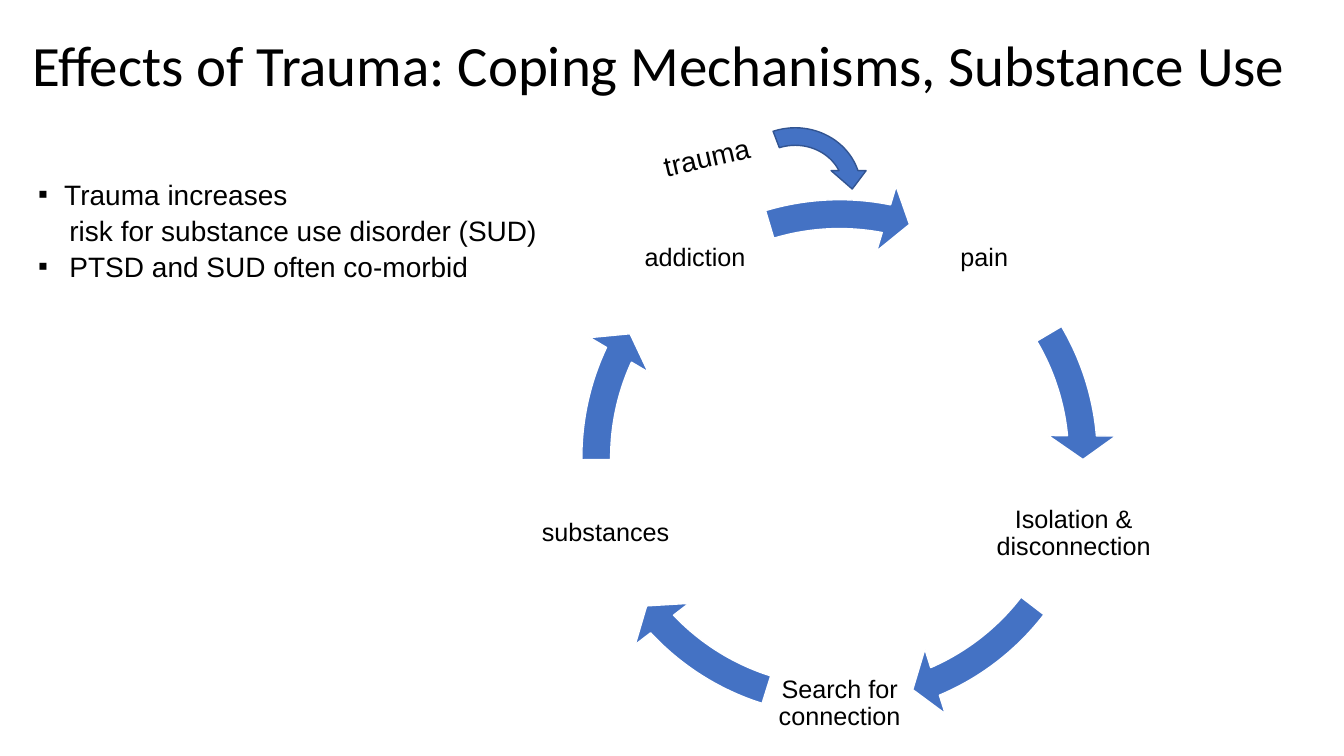
from math import cos, radians, sin

from lxml.etree import SubElement
from pptx import Presentation
from pptx.dml.color import RGBColor as Rgb
from pptx.enum.shapes import MSO_SHAPE as Kind
from pptx.enum.text import MSO_ANCHOR as Anchor, PP_ALIGN as Align
from pptx.oxml.ns import qn
from pptx.util import Cm, Pt

HUES = {"ink": "000000", "paper": "FFFFFF", "arrow": "4472C4", "edge": "325491"}

# Cycle: label, label width, start and end angle of the arrow after it
STEPS = [
    ("pain", 3.73, 329.44, 354.88),
    ("Isolation & disconnection", 6.71, 37.56, 66.91),
    ("Search for connection", 3.73, 107.5, 136.84),
    ("substances", 3.73, 179.51, 204.96),
    ("addiction", 3.73, 253.31, 281.09),
]
MID_X, MID_Y = 21.16, 11.53
REACH = 6.2
RING = 13.97
SIDE = 3.73

# Bullet lines: text, left margin, first-line indent, bullet
POINTS = [
    ("Trauma increases", 0.81, -0.66, "▪"),
    ("risk for substance use disorder (SUD)", 0.94, 0, None),
    ("PTSD and SUD often co-morbid", 0.94, -0.79, "▪"),
]


def hue(name):
    return Rgb.from_string(HUES[name])


def style(para, size, font="Arial", space=0.9):
    para.line_spacing = space
    for run in para.runs:
        run.font.size = Pt(size)
        run.font.name = font
        run.font.color.rgb = hue("ink")


def add_text(slide, box, text, size, font="Arial", space=0.9):
    shape = slide.shapes.add_textbox(*map(Cm, box))
    frame = shape.text_frame
    frame.word_wrap = True
    frame.text = text
    for para in frame.paragraphs:
        style(para, size, font, space)
    return shape


def add_label(slide, text, width, angle):
    turn = radians(angle)
    left = MID_X + REACH * cos(turn) - width / 2
    top = MID_Y + REACH * sin(turn) - SIDE / 2
    frame = add_text(slide, (left, top, width, SIDE), text, 18).text_frame
    frame.vertical_anchor = Anchor.MIDDLE
    frame.margin_left = frame.margin_right = Cm(0.08)
    frame.margin_top = frame.margin_bottom = Cm(0.08)
    frame.paragraphs[0].alignment = Align.CENTER


def add_arrow(slide, box, start, end, head, thick, wing, edge):
    shape = slide.shapes.add_shape(Kind.CIRCULAR_ARROW, *map(Cm, box))
    shape.shadow.inherit = False
    # One degree is 0.6 of an adjustment unit
    values = (thick, head * 0.6, end * 0.6, start * 0.6, wing)
    for i, value in enumerate(values):
        shape.adjustments[i] = value
    shape.fill.solid()
    shape.fill.fore_color.rgb = hue("arrow")
    shape.line.color.rgb = hue(edge)
    shape.line.width = Pt(1)


def indent(para, left, first, mark):
    props = para._p.get_or_add_pPr()
    props.set("marL", str(Cm(left)))
    props.set("indent", str(Cm(first)))
    if mark:
        SubElement(props, qn("a:buFont")).set("typeface", "Arial")
        SubElement(props, qn("a:buChar")).set("char", mark)


def main():
    deck = Presentation()
    deck.slide_width, deck.slide_height = Cm(33.87), Cm(19.05)
    slide = deck.slides.add_slide(deck.slide_layouts[6])

    # Title
    title = add_text(slide, (0.56, 0.46, 32.36, 2.51),
                     "Effects of Trauma: Coping Mechanisms, Substance Use",
                     40.7, "Calibri")
    title.text_frame.vertical_anchor = Anchor.MIDDLE
    title.fill.solid()
    title.fill.fore_color.rgb = hue("paper")

    # Cycle of five steps
    ring = (MID_X - RING / 2, MID_Y - RING / 2, RING, RING)
    for i, (text, width, start, end) in enumerate(STEPS):
        add_label(slide, text, width, -54 + 72 * i)
        add_arrow(slide, ring, start, end, 5.6, 0.052, 0.061, "paper")

    # Bullet list
    lines = "\n".join(point[0] for point in POINTS)
    body = add_text(slide, (0.56, 4.29, 16.99, 2.95), lines, 20, space=1.07)
    for para, point in zip(body.text_frame.paragraphs, POINTS):
        indent(para, *point[1:])

    # Trauma entering the cycle
    cause = add_text(slide, (16.28, 3.25, 3.76, 1.09), "trauma", 20, space=1.07)
    cause.rotation = 347
    indent(cause.text_frame.paragraphs[0], 0.15, 0, None)
    add_arrow(slide, (18.16, 3, 3.76, 3.53), 249.1, 340.96, 19.04,
              0.125, 0.125, "edge")

    deck.save("out.pptx")


if __name__ == "__main__":
    main()
